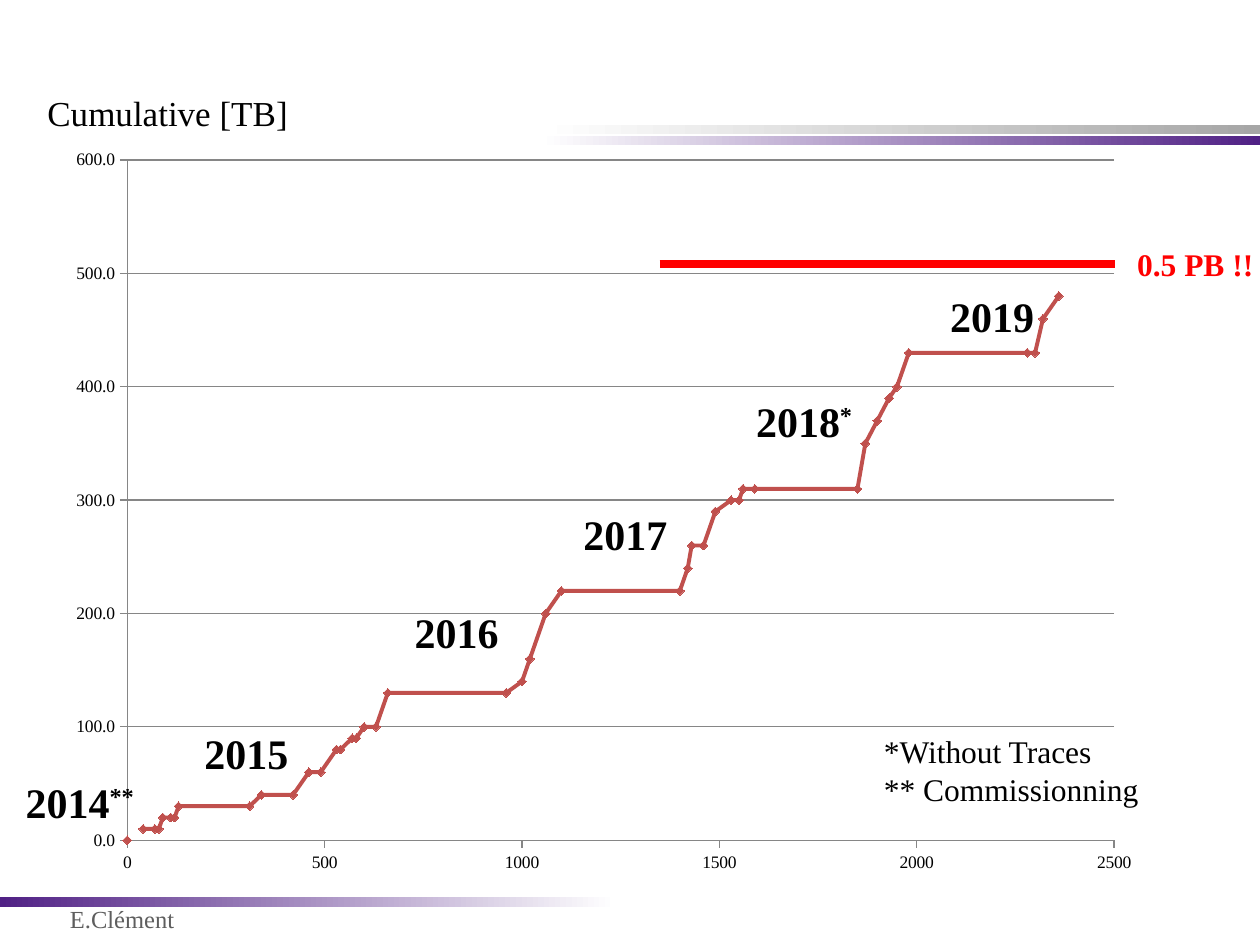
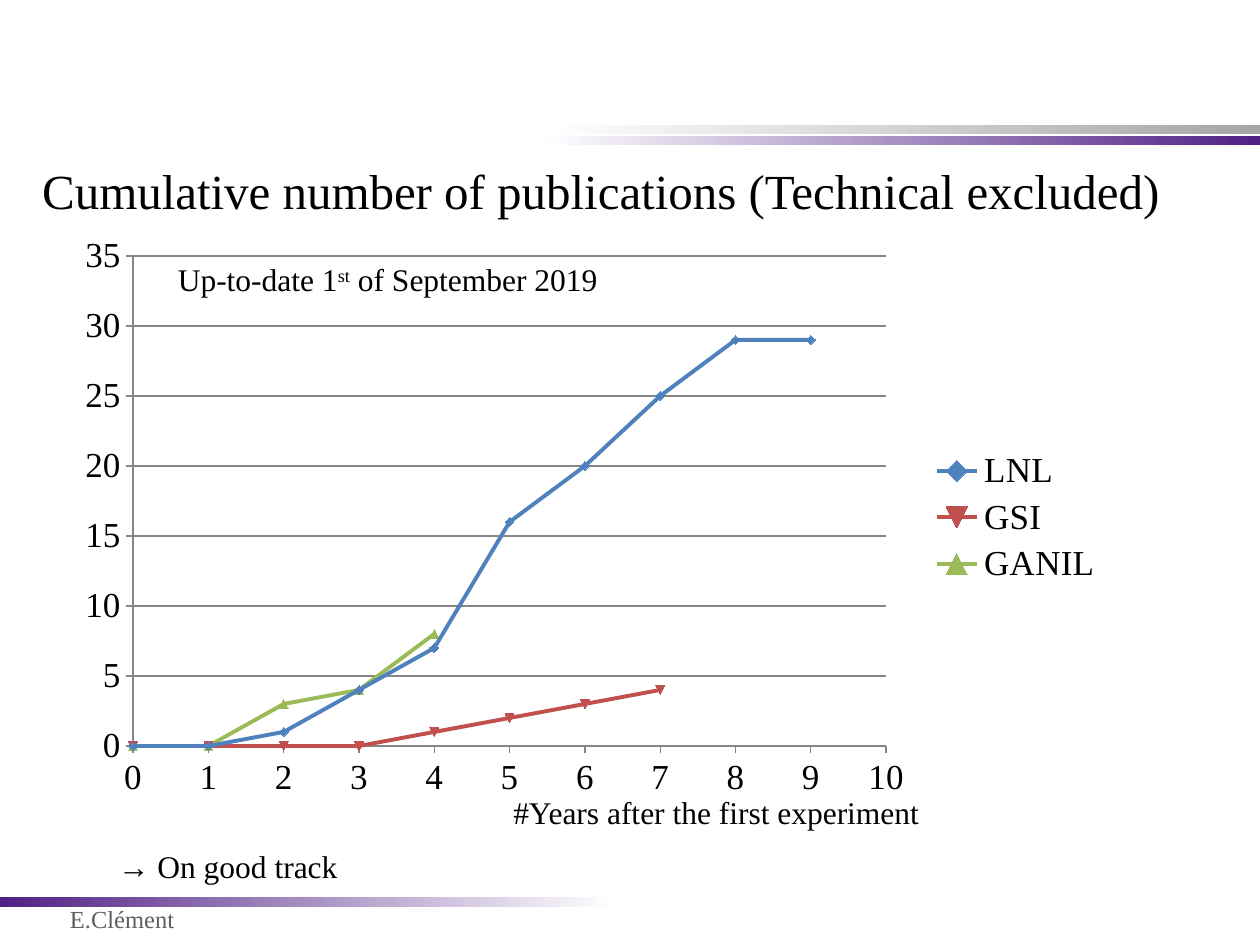
from collections import namedtuple

from lxml import etree
from pptx import Presentation
from pptx.chart.data import XyChartData
from pptx.dml.color import RGBColor
from pptx.enum.chart import XL_CHART_TYPE, XL_LEGEND_POSITION, XL_MARKER_STYLE, XL_TICK_MARK
from pptx.enum.shapes import MSO_CONNECTOR, MSO_SHAPE
from pptx.oxml.ns import qn
from pptx.util import Pt

SCATTER_LINES = XL_CHART_TYPE.XY_SCATTER_LINES
LEGEND_RIGHT = XL_LEGEND_POSITION.RIGHT
AUTO_MARKER = XL_MARKER_STYLE.AUTOMATIC
TICK_OUT, TICK_NONE = XL_TICK_MARK.OUTSIDE, XL_TICK_MARK.NONE
STRAIGHT = MSO_CONNECTOR.STRAIGHT
RECTANGLE = MSO_SHAPE.RECTANGLE

FONT = "Times New Roman"
BLACK = RGBColor(0x00, 0x00, 0x00)
WHITE = RGBColor(0xFF, 0xFF, 0xFF)
GREY = RGBColor(0xA6, 0xA6, 0xA6)
PURPLE = RGBColor(0x50, 0x21, 0x85)
FOOTER_GREY = RGBColor(0x5E, 0x5E, 0x5E)
GRID_GREY = RGBColor(0x86, 0x86, 0x86)
ALERT_RED = RGBColor(0xFF, 0x00, 0x00)
BLUE = RGBColor(0x4F, 0x81, 0xBD)
BRICK = RGBColor(0xC0, 0x50, 0x4D)
GREEN = RGBColor(0x9B, 0xBB, 0x59)

Box = namedtuple("Box", "left top width height")
Scale = namedtuple("Scale", "maximum step number_format")

DATA_VOLUME = [
    (0, 0), (30, None), (40, 10), (70, 10), (80, 10), (90, 20), (110, 20),
    (120, 20), (130, 30), (310, 30), (340, 40), (420, 40), (460, 60),
    (490, 60), (530, 80), (540, 80), (570, 90), (580, 90), (600, 100),
    (630, 100), (660, 130), (960, 130), (1000, 140), (1020, 160),
    (1060, 200), (1100, 220), (1400, 220), (1420, 240), (1430, 260),
    (1460, 260), (1490, 290), (1530, 300), (1550, 300), (1560, 310),
    (1590, 310), (1590, 310), (1850, 310), (1870, 350), (1900, 370),
    (1930, 390), (1950, 400), (1980, 430), (2280, 430), (2300, 430),
    (2320, 460), (2360, 480),
]
YEAR_LABELS = [
    ("2014", "**", -23.8, 362.7), ("2015", "", 78.4, 334.8),
    ("2016", "", 198.5, 265.5), ("2017", "", 295, 210),
    ("2018", "*", 393.6, 145.2), ("2019", "", 504.5, 85.2),
]
PUBLICATIONS = [
    ("LNL", BLUE, list(enumerate([0, 0, 1, 4, 7, 16, 20, 25, 29, 29]))),
    ("GSI", BRICK, list(zip([0, 0, 0, 1, 2, 3, 4, 5, 6, 7],
                            [0, 0, 0, 0, 0, 0, 1, 2, 3, 4]))),
    ("GANIL", GREEN, list(zip([0, 0, 0, 0, 0, 0, 1, 2, 3, 4],
                              [0, 0, 0, 0, 0, 0, 0, 3, 4, 8]))),
]


def inside(box, left, top, width, height):
    return Box(box.left + left, box.top + top, width, height)


def points(box):
    return [Pt(length) for length in box]


def add_text(page, box, text, size=18, color=BLACK, bold=False, raised="", after="", inset=None):
    frame = page.shapes.add_textbox(*points(box)).text_frame
    frame.word_wrap = False
    if inset is not None:
        frame.margin_left = frame.margin_right = Pt(inset)
        frame.margin_top = frame.margin_bottom = Pt(inset)
    for index, line in enumerate(text.split("\n")):
        para = frame.paragraphs[0] if index == 0 else frame.add_paragraph()
        for words, baseline in ((line, 0), (raised, 30000), (after, 0)):
            if words:
                span = para.add_run()
                span.text = words
                span.font.name, span.font.size = FONT, Pt(size)
                span.font.bold = bold
                span.font.color.rgb = color
                if baseline:
                    span.font._element.set("baseline", str(baseline))


def add_band(page, box, color, angle):
    band = page.shapes.add_shape(RECTANGLE, *points(box))
    band.shadow.inherit = False
    band.line.fill.background()
    band.fill.gradient()
    band.fill.gradient_angle = angle
    for stop, stop_color in zip(band.fill.gradient_stops, (color, WHITE)):
        stop.color.rgb = stop_color


def add_frame(page, box):
    add_band(page, inside(box, 309, 71.6, 411, 5), GREY, 180)
    add_band(page, inside(box, 309, 77.7, 411, 5), PURPLE, 180)
    add_text(page, inside(box, 40, 516.6, 100, 20), "E.Clément", size=14, color=FOOTER_GREY, inset=0)
    add_band(page, inside(box, 0, 512.6, 352, 5.8), PURPLE, 0)


def style_axis(axis, scale):
    axis.minimum_scale, axis.maximum_scale = 0, scale.maximum
    axis.major_unit = scale.step
    axis.major_tick_mark, axis.minor_tick_mark = TICK_OUT, TICK_NONE
    axis.tick_labels.number_format = scale.number_format
    axis.tick_labels.number_format_is_linked = False
    axis.format.line.color.rgb = GRID_GREY
    axis.format.line.width = Pt(0.75)


def place_plot(chart, plot):
    area = chart._chartSpace.chart.plotArea
    for old in area.findall(qn("c:layout")):
        area.remove(old)
    layout = etree.Element(qn("c:layout"))
    manual = etree.SubElement(layout, qn("c:manualLayout"))
    values = dict(layoutTarget="inner", xMode="edge", yMode="edge",
                  x=plot.left, y=plot.top, w=plot.width, h=plot.height)
    for name, value in values.items():
        etree.SubElement(manual, qn("c:" + name)).set("val", str(value))
    area.insert(0, layout)


def add_scatter(page, box, curves, across, up, plot, size, legend=False):
    data = XyChartData()
    for name, _, pairs in curves:
        series = data.add_series(name)
        for x, y in pairs:
            series.add_data_point(x, y)
    chart = page.shapes.add_chart(SCATTER_LINES, *points(box), data).chart
    chart.has_title = False
    chart.font.name, chart.font.size = FONT, Pt(size)
    chart.font.color.rgb = BLACK
    chart.has_legend = legend
    if legend:
        chart.legend.position = LEGEND_RIGHT
        chart.legend.include_in_layout = False
    style_axis(chart.category_axis, across)
    style_axis(chart.value_axis, up)
    chart.category_axis.has_major_gridlines = False
    chart.value_axis.has_major_gridlines = True
    grid = chart.value_axis.major_gridlines.format.line
    grid.color.rgb, grid.width = GRID_GREY, Pt(0.75)
    chart.plots[0].vary_by_categories = False
    for index, (series, (_, color, pairs)) in enumerate(zip(chart.plots[0].series, curves)):
        series.smooth = False
        series.format.line.color.rgb = color
        series.format.line.width = Pt(2.25)
        series.marker.style, series.marker.size = AUTO_MARKER, 5
        series.marker.format.fill.solid()
        series.marker.format.fill.fore_color.rgb = color
        series.marker.format.line.color.rgb = color
        series._element.find(qn("c:idx")).set("val", str(index + 1))
        for gap, (_, y) in enumerate(pairs):
            if y is None:
                for point in series._element.xpath(f'c:yVal//c:pt[@idx="{gap}"]'):
                    point.getparent().remove(point)
    place_plot(chart, plot)


def add_target_line(page, box):
    target = page.shapes.add_connector(
        STRAIGHT, Pt(box.left), Pt(box.top), Pt(box.left + box.width), Pt(box.top))
    target.line.color.rgb = ALERT_RED
    target.line.width = Pt(4.5)
    etree.SubElement(target._element.spPr, qn("a:effectLst"))
    add_text(page, inside(box, box.width + 5.7, -14.7, 81, 29), "0.5 PB !!", color=ALERT_RED, bold=True)


def build_data_volume(page, box):
    add_scatter(page, box, [("Series 1", BRICK, DATA_VOLUME)],
                Scale(2500, 500, "General"), Scale(600, 100, "0.0"),
                Box(0.066, 0.033, 0.898, 0.904), size=10)
    add_text(page, inside(box, -11.3, -28.3, 153, 32), "Cumulative [TB]", size=20)
    for year, mark, left, top in YEAR_LABELS:
        add_text(page, inside(box, left, top, 63 + 8 * len(mark), 36), year,
                 size=24, bold=True, raised=mark)
    add_text(page, inside(box, 466.7, 337.4, 161, 51), "*Without Traces\n** Commissionning")
    add_target_line(page, inside(box, 345.7, 73.7, 260, 0))


def build_publications(page, box):
    add_scatter(page, box, PUBLICATIONS, Scale(10, 1, "General"), Scale(35, 5, "General"),
                Box(0.065, 0.054, 0.716, 0.836), size=20, legend=True)
    add_text(page, inside(box, 57.5, 16.8, 262, 29), "Up-to-date 1", raised="st",
             after=" of September 2019")
    add_text(page, inside(box, -20, -40, 660, 41),
             "Cumulative number of publications (Technical excluded)", size=28)
    add_text(page, inside(box, 249.2, 321.4, 253, 29), "#Years after the first experiment")
    add_text(page, inside(box, 23.4, 352, 141, 29), "→ On good track")


def main():
    deck = Presentation()
    deck.slide_width, deck.slide_height = Pt(720), Pt(540)
    regions = [
        (build_data_volume, Box(31.3, 77.3, 628, 430)),
        (build_publications, Box(37, 128.2, 601, 335)),
    ]
    for build, box in regions:
        page = deck.slides.add_slide(deck.slide_layouts[6])
        add_frame(page, Box(0, 0, 720, 540))
        build(page, box)
    deck.save("out.pptx")


if __name__ == "__main__":
    main()
